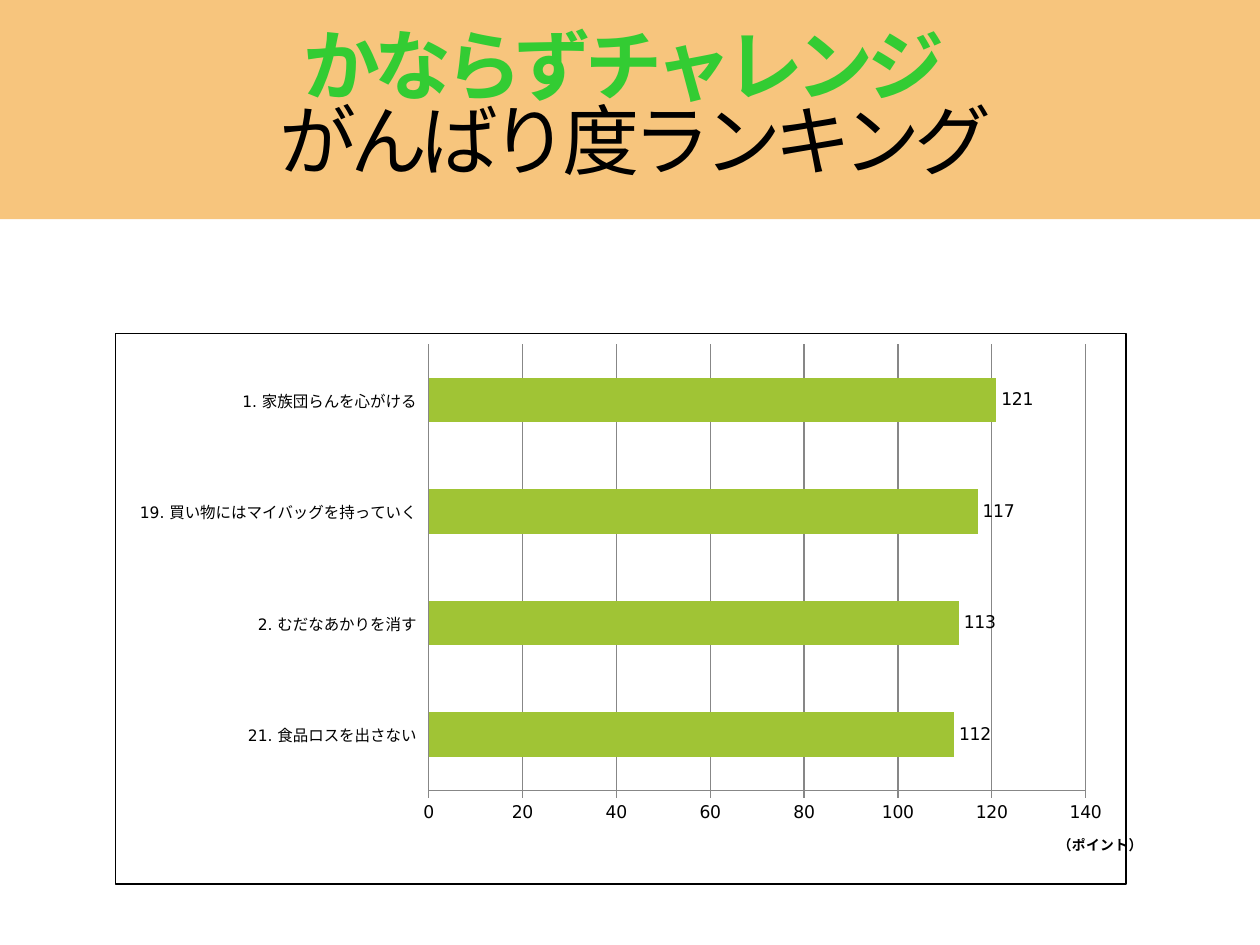
from dataclasses import dataclass

from lxml import etree
from pptx import Presentation
from pptx.chart.data import CategoryChartData
from pptx.dml.color import RGBColor
from pptx.enum import chart as chart_enum, text
from pptx.oxml import parse_xml
from pptx.oxml.ns import nsdecls, qn
from pptx.util import Pt


@dataclass(frozen=True)
class Theme:
    latin: str = "DejaVu Sans"
    japanese: str = "Noto Sans CJK JP"
    banner: str = "F7C57D"
    accent: str = "33CC33"
    ink: str = "000000"
    bar: str = "A0C435"
    grid: str = "878787"
    title_size: int = 44
    chart_size: int = 10
    category_size: int = 9
    unit_size: int = 8


THEME = Theme()
RANKING = [
    ("21. 食品ロスを出さない", 112),
    ("2. むだなあかりを消す", 113),
    ("19. 買い物にはマイバッグを持っていく", 117),
    ("1. 家族団らんを心がける", 121),
]


def color(value):
    return RGBColor.from_string(value)


def set_east_asian_font(font_properties):
    """Give Japanese characters their own typeface."""
    latin = font_properties.find(qn("a:latin"))
    latin.addnext(parse_xml(f'<a:ea {nsdecls("a")} typeface="{THEME.japanese}"/>'))


def set_layout(parent, index, **fractions):
    """Place a chart part by fractions of the chart area."""
    old_layout = parent.find(qn("c:layout"))
    if old_layout is not None:
        parent.remove(old_layout)
    layout = etree.Element(qn("c:layout"))
    manual = etree.SubElement(layout, qn("c:manualLayout"))
    if "w" in fractions:
        etree.SubElement(manual, qn("c:layoutTarget"), val="inner")
    for name in ("x", "y"):
        etree.SubElement(manual, qn(f"c:{name}Mode"), val="edge")
    for name, value in fractions.items():
        etree.SubElement(manual, qn(f"c:{name}"), val=str(value))
    parent.insert(index, layout)


def add_title_run(paragraph, wording, value, bold):
    run = paragraph.add_run()
    run.text = wording
    run.font.name = THEME.japanese
    run.font.size = Pt(THEME.title_size)
    run.font.bold = bold
    run.font.color.rgb = color(value)
    properties = run.font._element
    properties.set("spc", "-360")
    set_east_asian_font(properties)


def add_banner(slide):
    title = slide.shapes.title
    title.left, title.top, title.width, title.height = Pt(0), Pt(0), Pt(720), Pt(125.3)
    title.fill.solid()
    title.fill.fore_color.rgb = color(THEME.banner)
    frame = title.text_frame
    frame.auto_size = text.MSO_AUTO_SIZE.NONE
    frame.word_wrap = False
    frame.vertical_anchor = text.MSO_ANCHOR.MIDDLE
    paragraph = frame.paragraphs[0]
    paragraph.alignment = text.PP_ALIGN.CENTER
    paragraph.line_spacing = 0.81
    add_title_run(paragraph, "かならずチャレンジ ", THEME.accent, True)
    paragraph.add_line_break()
    add_title_run(paragraph, " がんばり度ランキング", THEME.ink, False)


def format_axes(chart):
    category_axis, value_axis = chart.category_axis, chart.value_axis
    category_axis.tick_label_position = chart_enum.XL_TICK_LABEL_POSITION.LOW
    category_axis.major_tick_mark = chart_enum.XL_TICK_MARK.NONE
    category_axis.tick_labels.font.size = Pt(THEME.category_size)
    value_axis.minimum_scale, value_axis.maximum_scale = 0, 140
    value_axis.major_unit = 20
    value_axis.major_tick_mark = chart_enum.XL_TICK_MARK.OUTSIDE
    value_axis.has_major_gridlines = True
    for item in (category_axis, value_axis, value_axis.major_gridlines):
        item.format.line.color.rgb = color(THEME.grid)
        item.format.line.width = Pt(0.75)

    # Unit below the end of the value axis
    axis_title = value_axis.axis_title
    paragraph = axis_title.text_frame.paragraphs[0]
    paragraph.text = "（ポイント）"
    font = paragraph.font
    font.name, font.size, font.bold = THEME.latin, Pt(THEME.unit_size), True
    font.color.rgb = color(THEME.ink)
    set_east_asian_font(font._element)
    set_layout(axis_title._element, 1, x=0.93, y=0.9)


def format_bars(plot):
    plot.gap_width = 150
    plot.vary_by_categories = False
    series = plot.series[0]
    series.format.fill.solid()
    series.format.fill.fore_color.rgb = color(THEME.bar)
    plot.has_data_labels = True
    plot.data_labels.show_value = True
    plot.data_labels.position = chart_enum.XL_LABEL_POSITION.OUTSIDE_END


def add_ranking_chart(slide):
    data = CategoryChartData()
    data.categories = [name for name, _ in RANKING]
    data.add_series("Series 1", [points for _, points in RANKING])
    chart = slide.shapes.add_chart(
        chart_enum.XL_CHART_TYPE.BAR_CLUSTERED,
        Pt(65.5), Pt(190), Pt(589), Pt(315.5), data,
    ).chart
    chart.has_title = False
    chart.has_legend = False
    chart.font.name = THEME.latin
    chart.font.size = Pt(THEME.chart_size)
    chart.font.color.rgb = color(THEME.ink)
    set_east_asian_font(chart.font._element)
    format_axes(chart)
    format_bars(chart.plots[0])

    # Plot position and frame
    chart_space = chart._chartSpace
    plot_area = chart_space.find(".//" + qn("c:plotArea"))
    set_layout(plot_area, 0, x=0.31, y=0.02, w=0.65, h=0.81)
    chart_space.find(qn("c:txPr")).addprevious(parse_xml(
        f'<c:spPr {nsdecls("c", "a")}><a:noFill/><a:ln w="{Pt(0.75)}"><a:solidFill>'
        f'<a:srgbClr val="{THEME.ink}"/></a:solidFill></a:ln></c:spPr>'
    ))


def main():
    presentation = Presentation()
    presentation.slide_width, presentation.slide_height = Pt(720), Pt(540)
    slide = presentation.slides.add_slide(presentation.slide_layouts[5])
    add_banner(slide)
    add_ranking_chart(slide)
    presentation.save("out.pptx")


if __name__ == "__main__":
    main()
